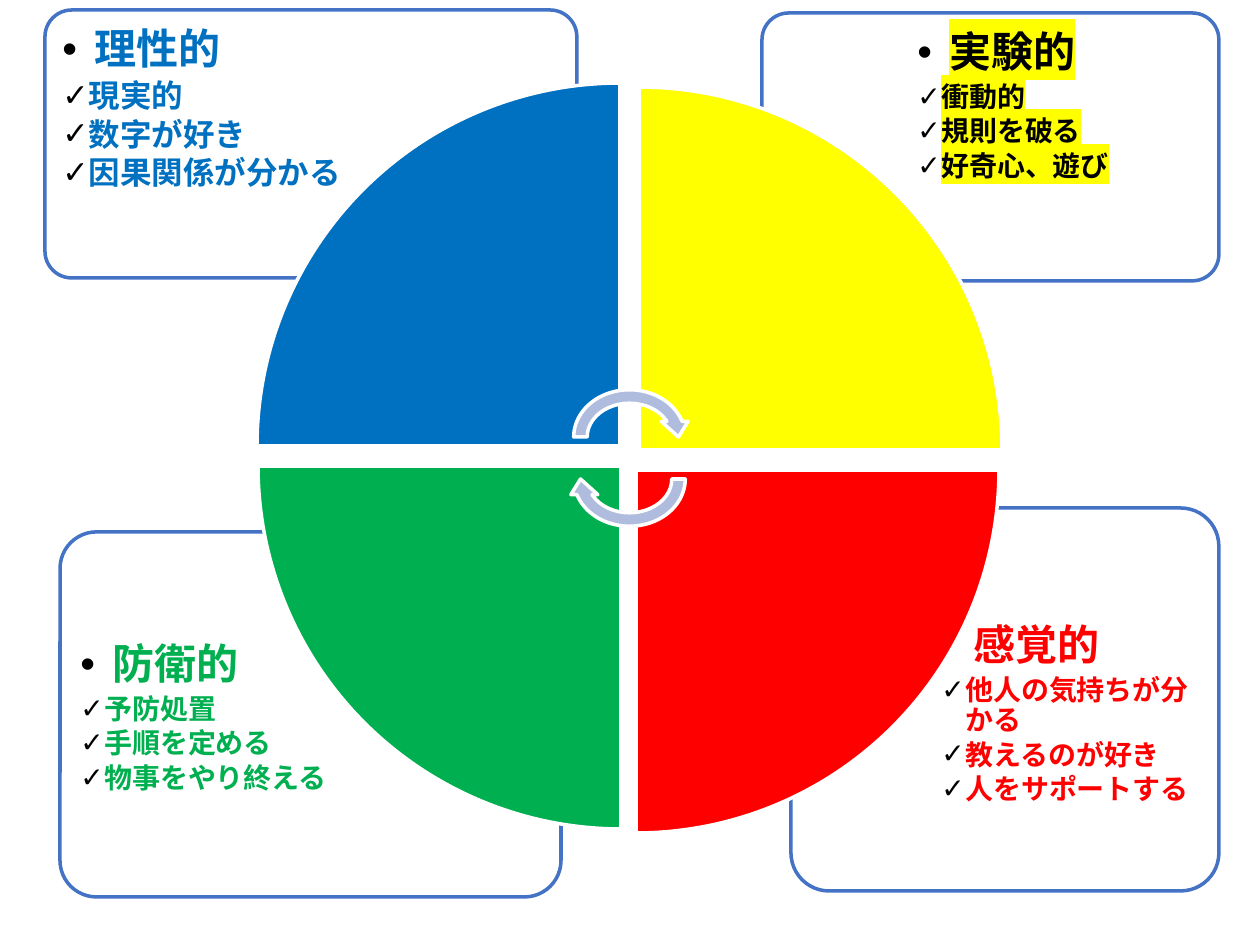
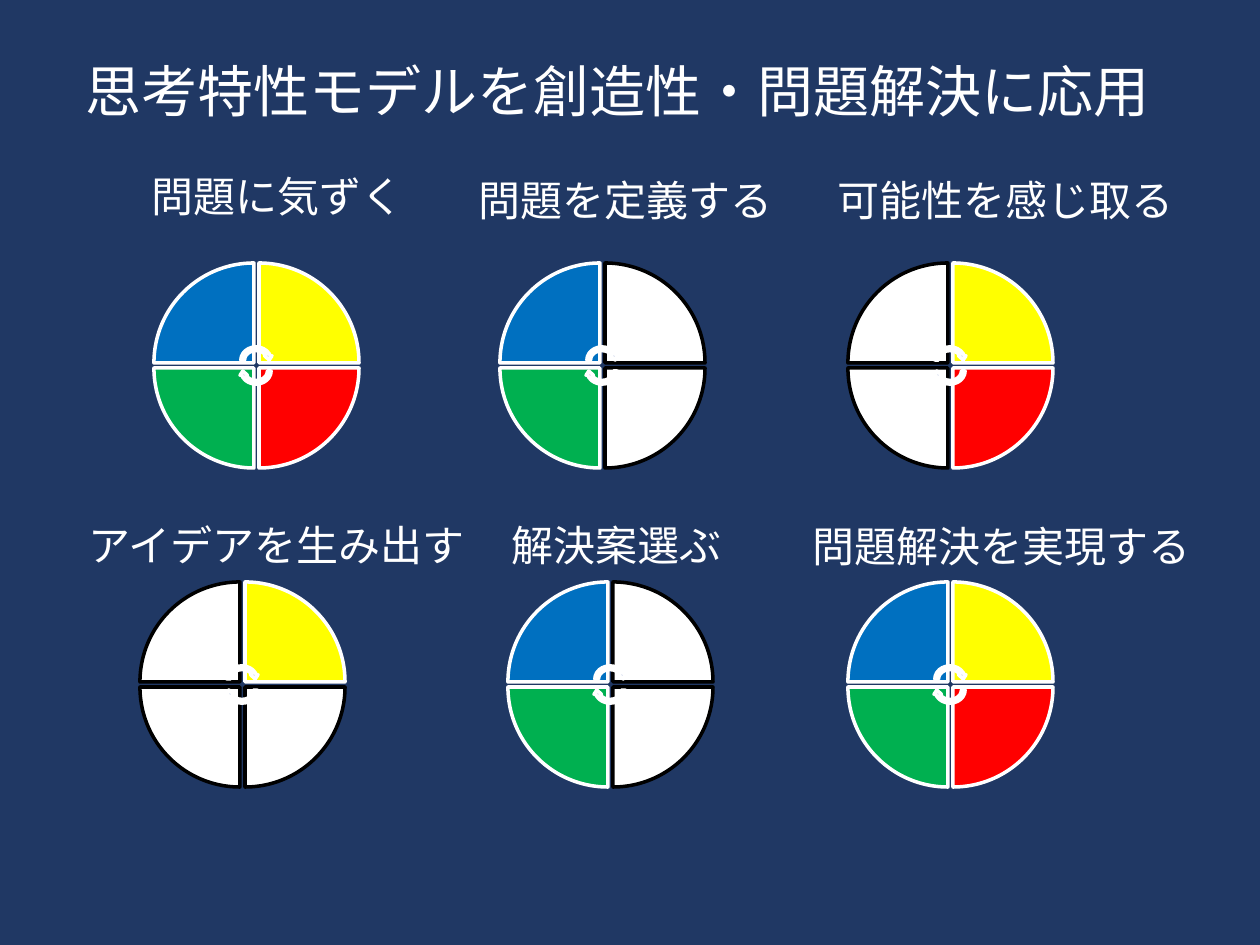
from lxml.etree import SubElement
from pptx import Presentation
from pptx.dml.color import RGBColor
from pptx.enum.shapes import MSO_SHAPE
from pptx.enum.text import MSO_AUTO_SIZE
from pptx.oxml.ns import qn
from pptx.util import Emu, Pt

PX = 914400 // 126
FONT = "Arial"

WHITE = RGBColor(0xFF, 0xFF, 0xFF)
BLACK = RGBColor(0x00, 0x00, 0x00)
NAVY = RGBColor(0x20, 0x38, 0x64)
BLUE = RGBColor(0x00, 0x70, 0xC0)
YELLOW = RGBColor(0xFF, 0xFF, 0x00)
RED = RGBColor(0xFF, 0x00, 0x00)
GREEN = RGBColor(0x00, 0xB0, 0x50)
PANEL_LINE = RGBColor(0x44, 0x72, 0xC4)
ARROW_FILL = RGBColor(0xB0, 0xBC, 0xDE)

# Quadrants run clockwise from the top left, as do the wedge rotations.
QUADRANTS = (BLUE, YELLOW, RED, GREEN)

# frame, text box, heading, traits, trait size, text colour, highlight
THINKING_STYLES = [
    ((791, 508, 428, 383), (929, 612, 283, 271), "感覚的",
     ["他人の気持ちが分かる", "教えるのが好き", "人をサポートする"], 16, RED, None),
    ((60, 532, 501, 365), (68, 631, 335, 258), "防衛的",
     ["予防処置", "手順を定める", "物事をやり終える"], 16, GREEN, None),
    ((762, 13, 457, 268), (905, 19, 309, 189), "実験的",
     ["衝動的", "規則を破る", "好奇心、遊び"], 16, BLACK, YELLOW),
    ((45, 10, 532, 268), (50, 16, 360, 189), "理性的",
     ["現実的", "数字が好き", "因果関係が分かる"], 18, BLUE, None),
]
LARGE_WEDGE = 363
LARGE_CORNERS = [(257, 83), (639, 87), (636, 470), (258, 466)]
LARGE_ARROWS = [(567, 383, 125, 108), (567, 425, 125, 108)]

TITLE = "思考特性モデルを創造性・問題解決に応用"
# label, label box, wheel left and top, active quadrants
STEPS = [
    ("問題に気ずく", (139, 164, 280, 63), (154, 263), QUADRANTS),
    ("問題を定義する", (466, 168, 323, 63), (500, 263), (BLUE, GREEN)),
    ("可能性を感じ取る", (825, 168, 364, 63), (848, 263), (YELLOW, RED)),
    ("アイデアを生み出す", (76, 513, 407, 63), (140, 582), (YELLOW,)),
    ("解決案選ぶ", (499, 513, 237, 63), (508, 582), (BLUE, GREEN)),
    ("問題解決を実現する", (800, 514, 407, 63), (848, 582), QUADRANTS),
]
SMALL_WEDGE, SMALL_PITCH = 100, 105
SMALL_ARROW_W, SMALL_ARROW_H = 34, 30
SMALL_ARROW_DROPS = (82, 93)


def px(*lengths):
    return [Emu(length * PX) for length in lengths]


def new_slide(deck, background):
    slide = deck.slides.add_slide(deck.slide_layouts[6])
    slide.background.fill.solid()
    slide.background.fill.fore_color.rgb = background
    return slide


def add_outlined(shapes, kind, frame, fill, line, rotation=0):
    shape = shapes.add_shape(kind, *px(*frame))
    shape.shadow.inherit = False
    shape.fill.solid()
    shape.fill.fore_color.rgb = fill
    shape.line.color.rgb = line
    shape.line.width = Pt(2)
    shape.rotation = rotation
    return shape


def format_run(run, size, color, bold=False, highlight=None):
    run.font.size = Pt(size)
    run.font.name = FONT
    run.font.bold = bold
    run.font.color.rgb = color
    if highlight is not None:
        properties = run.font.fill._xPr
        marker = SubElement(properties, qn("a:highlight"))
        SubElement(marker, qn("a:srgbClr"), val=str(highlight))
        properties.find(qn("a:solidFill")).addnext(marker)


def set_bullet(paragraph, char, indent):
    properties = paragraph._p.get_or_add_pPr()
    properties.set("marL", str(indent * PX))
    properties.set("indent", str(-indent * PX))
    bullet_color = SubElement(properties, qn("a:buClr"))
    SubElement(bullet_color, qn("a:srgbClr"), val=str(BLACK))
    SubElement(properties, qn("a:buFont"), typeface=FONT)
    SubElement(properties, qn("a:buChar"), char=char)


def add_panel(slide, frame):
    panel = add_outlined(slide.shapes, MSO_SHAPE.ROUNDED_RECTANGLE, frame, WHITE, PANEL_LINE)
    panel.adjustments[0] = 0.1
    fill_color = panel._element.spPr.find(qn("a:solidFill"))[0]
    SubElement(fill_color, qn("a:alpha"), val="90000")


def add_traits(slide, frame, heading, traits, trait_size, color, highlight):
    text_frame = slide.shapes.add_textbox(*px(*frame)).text_frame
    text_frame.word_wrap = True
    text_frame.margin_top = text_frame.margin_bottom = Emu(91440)
    text_frame.text = "\n".join([heading, *traits])
    for number, paragraph in enumerate(text_frame.paragraphs):
        char, indent, size = ("✓", 24, trait_size) if number else ("•", 32, 24)
        set_bullet(paragraph, char, indent)
        paragraph.line_spacing = 0.9
        paragraph.space_after = Pt(round(size * 0.15, 1))
        format_run(paragraph.runs[0], size, color, True, highlight)


def add_wheel(slide, corners, wedge, arrows, active=QUADRANTS):
    """Draw four wedges, blank where inactive, and two arrows circling the hub."""
    shapes = slide.shapes.add_group_shape().shapes
    for turn, (corner, color) in enumerate(zip(corners, QUADRANTS)):
        fill, line = (color, WHITE) if color in active else (WHITE, BLACK)
        add_outlined(shapes, MSO_SHAPE.PIE_WEDGE, (*corner, wedge, wedge), fill, line, 90 * turn)
    for turn, frame in enumerate(arrows):
        add_outlined(shapes, MSO_SHAPE.CIRCULAR_ARROW, frame, ARROW_FILL, WHITE, 180 * turn)


def add_label(slide, text, frame, size, wrap=False):
    text_frame = slide.shapes.add_textbox(*px(*frame)).text_frame
    text_frame.word_wrap = wrap
    text_frame.auto_size = MSO_AUTO_SIZE.SHAPE_TO_FIT_TEXT
    text_frame.text = text
    format_run(text_frame.paragraphs[0].runs[0], size, WHITE)


def build_styles_slide(deck):
    slide = new_slide(deck, WHITE)
    for panel_frame, *traits in THINKING_STYLES:
        add_panel(slide, panel_frame)
        add_traits(slide, *traits)
    add_wheel(slide, LARGE_CORNERS, LARGE_WEDGE, LARGE_ARROWS)


def build_steps_slide(deck):
    slide = new_slide(deck, NAVY)
    arrow_inset = (SMALL_PITCH + SMALL_WEDGE - SMALL_ARROW_W) // 2
    for label, label_frame, (left, top), active in STEPS:
        right, bottom = left + SMALL_PITCH, top + SMALL_PITCH
        corners = [(left, top), (right, top), (right, bottom), (left, bottom)]
        arrows = [(left + arrow_inset, top + drop, SMALL_ARROW_W, SMALL_ARROW_H)
                  for drop in SMALL_ARROW_DROPS]
        add_wheel(slide, corners, SMALL_WEDGE, arrows, active)
        add_label(slide, label, label_frame, 24)
    add_label(slide, TITLE, (73, 50, 1113, 81), 32, wrap=True)


def main():
    deck = Presentation()
    deck.slide_width, deck.slide_height = px(1260, 945)
    build_styles_slide(deck)
    build_steps_slide(deck)
    deck.save("out.pptx")


if __name__ == "__main__":
    main()
